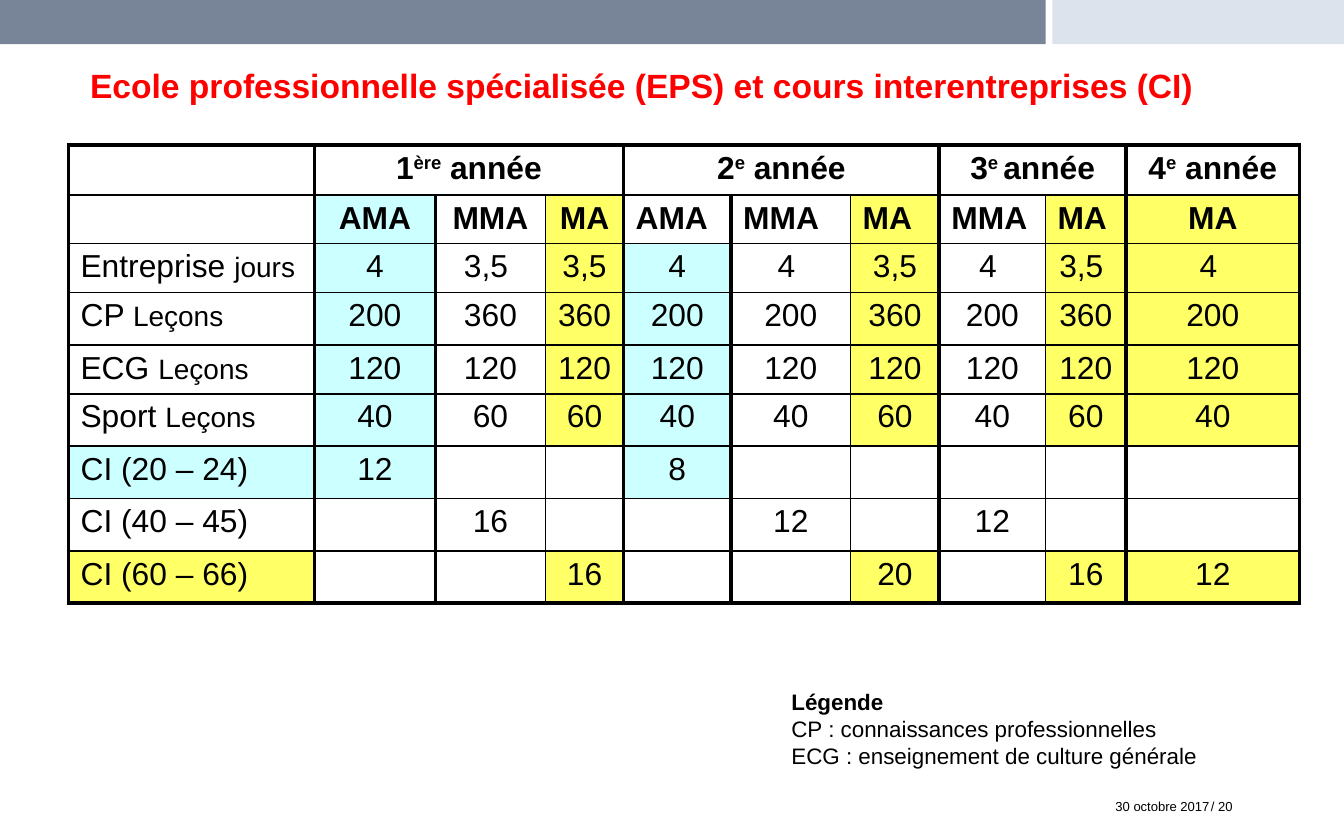
from pptx import Presentation
from pptx.dml.color import RGBColor
from pptx.enum.shapes import MSO_SHAPE
from pptx.enum.text import MSO_ANCHOR, PP_ALIGN
from pptx.oxml import parse_xml
from pptx.oxml.ns import nsdecls
from pptx.util import Inches, Pt

THEME = {
    "font": "Arial", "black": "000000", "red": "FE0000",
    "slate": "788598", "mist": "DCE3EC", "cyan": "CCFFFF", "yellow": "FFFF66",
    "title": 18, "cell": 17, "unit": 15, "legend": 12, "footer": 7,
    "thick": 2.25, "thin": 1,
}

prs = Presentation()
prs.slide_width, prs.slide_height = Inches(10), Inches(6.25)
s = prs.slides.add_slide(prs.slide_layouts[6])
U = prs.slide_width / 100  # grid of 100 columns by 62.5 rows
INSETS = {"margin_left": 0.9, "margin_right": 0.9, "margin_top": 0.4, "margin_bottom": 0.4}


def grid(*units):
    return [round(u * U) for u in units]


def add_run(p, text, size, color="black", bold=False):
    r = p.add_run()
    r.text = text
    fmt = {"name": THEME["font"], "size": Pt(THEME[size]), "bold": bold}
    for key, value in fmt.items():
        setattr(r.font, key, value)
    r.font.color.rgb = RGBColor.from_string(THEME[color])
    return r


# Top band
for left, width, color in ((0, 77.8, "slate"), (78.3, 21.7, "mist")):
    sp = s.shapes.add_shape(MSO_SHAPE.RECTANGLE, *grid(left, 0, width, 3.3))
    sp.shadow.inherit = False
    sp.fill.solid()
    sp.fill.fore_color.rgb = RGBColor.from_string(THEME[color])
    sp.line.fill.background()

# Title, legend and footer: place, size, colour, lines with their weight
TEXTS = [
    ((5.8, 4.4, 88.5, 6.9), "title", "red",
     [("Ecole professionnelle spécialisée (EPS) et cours interentreprises (CI)", True)]),
    ((57.9, 50.7, 36, 7.1), "legend", "black",
     [("Légende", True), ("CP : connaissances professionnelles", False),
      ("ECG : enseignement de culture générale", False)]),
    ((82.1, 59, 15.6, 3.5), "footer", "black", [("30 octobre 2017", False)]),
    ((89.2, 59, 7.7, 3.5), "footer", "black", [("/ 20", False)]),
]
for place, size, color, lines in TEXTS:
    tf = s.shapes.add_textbox(*grid(*place)).text_frame
    tf.word_wrap = True
    if size != "legend":
        for key, value in INSETS.items():
            setattr(tf, key, round(value * U))
    for i, (line, bold) in enumerate(lines):
        p = tf.paragraphs[0] if i == 0 else tf.add_paragraph()
        add_run(p, line, size, color, bold)

# Table content: "|" parts the runs of a cell
ROWS = [
    ["", "1|ère| année", "", "", "2|e| année", "", "", "3|e |année", "", "4|e| année"],
    ["", "AMA", "MMA", "MA", "AMA", "MMA", "MA", "MMA", "MA", "MA"],
    ["Entreprise |jours", "4", "3,5 ", "3,5", "4", "4 ", "3,5", "4 ", "3,5 ", "4 "],
    ["CP |Leçons", "200", "360", "360 ", "200", "200", "360", "200", "360", "200"],
    ["ECG |Leçons"] + ["120"] * 9,
    ["Sport |Leçons", "40", "60", "60", "40", "40", "60", "40", "60", "40"],
    ["CI (20 – 24)", "12", "", "", "8", "", "", "", "", ""],
    ["CI (40 – 45)", "", "16", "", "", "12", "", "12", "", ""],
    ["CI (60 – 66)", "", "", "16", "", "", "20", "", "16", "12"],
]
COL_WIDTHS = [18.3, 9, 8.2, 5.8, 8, 8.9, 6.6, 7.9, 6, 12.9]
ROW_HEIGHTS = [3.7, 3.6, 3.6, 3.9, 3.6, 3.9, 3.9, 3.9, 3.9]
COL_FILLS = {1: "cyan", 4: "cyan", 3: "yellow", 6: "yellow", 8: "yellow", 9: "yellow"}
LABEL_FILLS = {6: "cyan", 8: "yellow"}
YEAR_SPANS = [(1, 3), (4, 6), (7, 8)]
THIN_EDGES = {3, 6, 8}  # between MMA and MA of the same year
LAST = len(ROWS) - 1

tbl = s.shapes.add_table(len(ROWS), len(COL_WIDTHS),
                         *grid(5.1, 10.8, sum(COL_WIDTHS), sum(ROW_HEIGHTS))).table
tbl.first_row = tbl.horz_banding = False
for col, width in zip(tbl.columns, grid(*COL_WIDTHS)):
    col.width = width
for row, height in zip(tbl.rows, grid(*ROW_HEIGHTS)):
    row.height = height
for first, last in YEAR_SPANS:
    tbl.cell(0, first).merge(tbl.cell(0, last))

for i, row in enumerate(ROWS):
    for j, text in enumerate(row):
        cell = tbl.cell(i, j)
        cell.vertical_anchor = MSO_ANCHOR.TOP
        for key, value in INSETS.items():
            setattr(cell, key, round(value * U))

        # Text: years take a raised ending, labels a smaller unit
        p = cell.text_frame.paragraphs[0]
        left = j == 0 or (i == 1 and 4 <= j <= 8)
        p.alignment = PP_ALIGN.LEFT if left else PP_ALIGN.CENTER
        for k, part in enumerate(text.split("|") if text else []):
            r = add_run(p, part, "unit" if j == 0 and k else "cell", bold=i < 2)
            if i == 0 and k == 1:
                r.font._element.set("baseline", "30000")
        p._p.get_or_add_endParaRPr().set("sz", str(THEME["cell"] * 100))

        # Borders
        edges = {
            "L": "thin" if i and j in THIN_EDGES else "thick",
            "R": "thin" if i and j + 1 in THIN_EDGES else "thick",
            "T": "thick" if i == 0 else "thin",
            "B": "thick" if i == LAST else "thin",
        }
        for side, weight in edges.items():
            cell._tc.get_or_add_tcPr().append(parse_xml(
                f'<a:ln{side} {nsdecls("a")} w="{Pt(THEME[weight])}"><a:solidFill>'
                f'<a:srgbClr val="{THEME["black"]}"/></a:solidFill></a:ln{side}>'))

        # Fill: the second AMA heading stays plain
        color = LABEL_FILLS.get(i) if j == 0 else COL_FILLS.get(j)
        if color and text and i > 0 and (i, j) != (1, 4):
            cell.fill.solid()
            cell.fill.fore_color.rgb = RGBColor.from_string(THEME[color])
        else:
            cell.fill.background()

prs.save("out.pptx")
